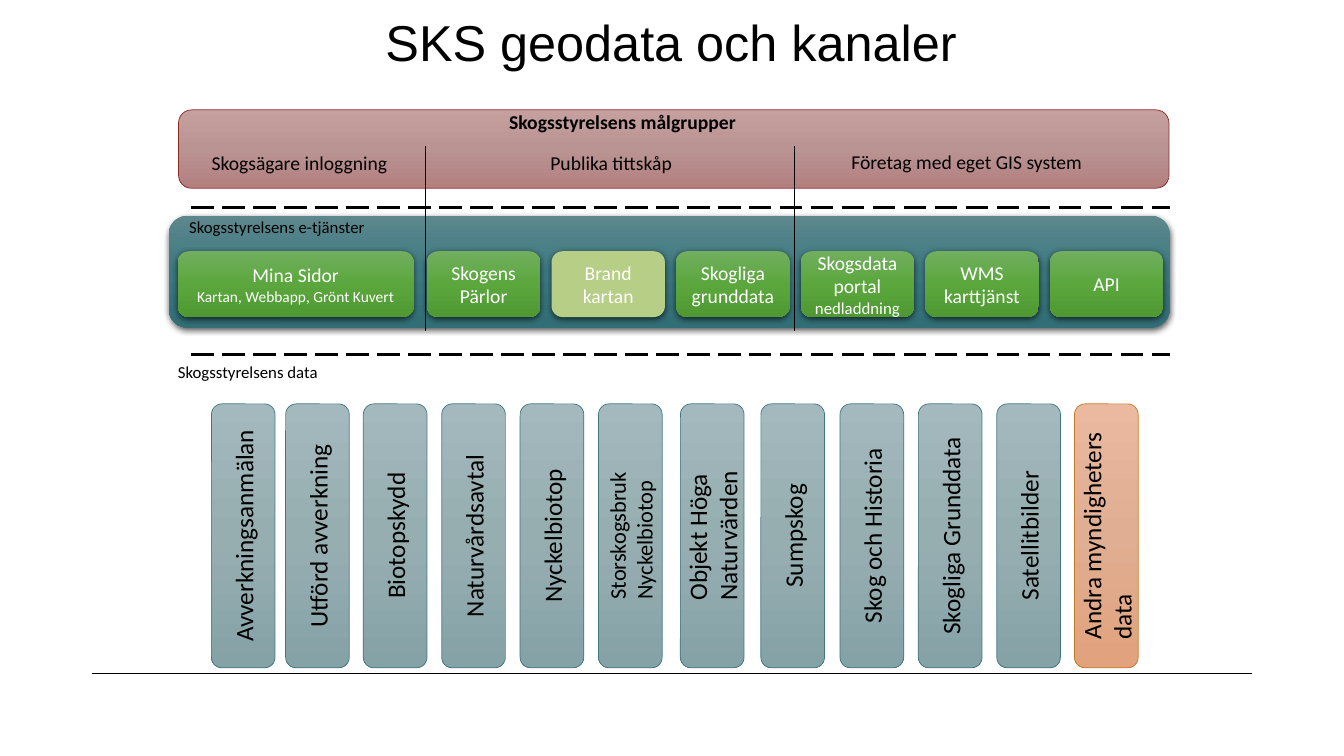
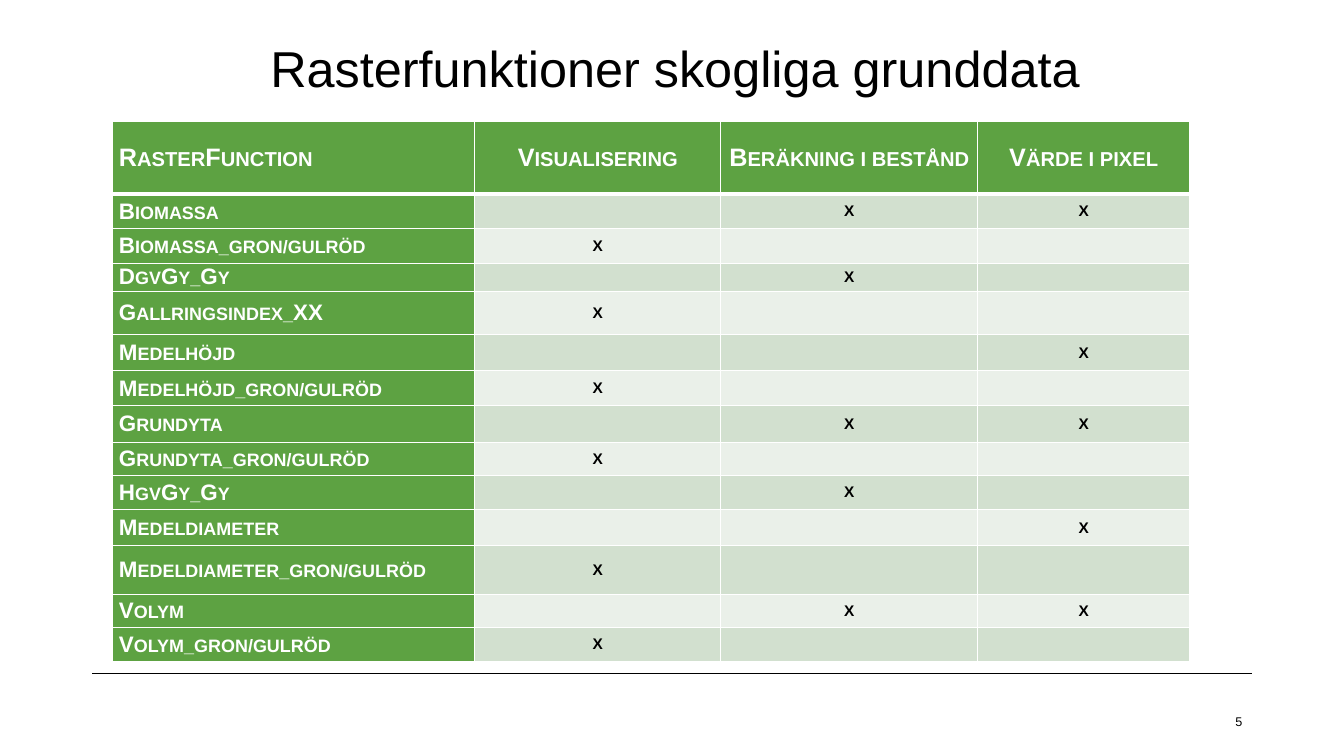
import copy
from dataclasses import dataclass
from typing import Any, Optional

import lxml.etree
import pptx
import pptx.dml.color
import pptx.enum.dml
import pptx.enum.shapes
import pptx.enum.text
import pptx.oxml.ns
import pptx.util

Pt = pptx.util.Pt
qn = pptx.oxml.ns.qn
ALIGN = pptx.enum.text.PP_ALIGN
ANCHOR = pptx.enum.text.MSO_ANCHOR

COLORS = {
    "black": "000000",
    "white": "FFFFFF",
    "header": "5DA242",
    "band_dark": "D2E0CF",
    "band_light": "EAF0E9",
    "lime": "B6CE85",
    "red_line": "8D2927",
    "slate_line": "3F777E",
    "orange_line": "C77922",
}
GRADIENTS = {
    "teal": ("5D878D", "3C7981", "326E76"),
    "red": ("C5A09F", "BA9393", "B27F7E"),
    "slate": ("A4B9BD", "97AEB1", "85A2A7"),
    "orange": ("EAB99F", "E0AE92", "E1A27D"),
    "green": ("71AE5E", "5BA73D", "4F9832"),
}


@dataclass
class Box:
    left: float
    top: float
    width: float
    height: float


@dataclass
class Line:
    text: str
    size: float
    color: str = "black"
    bold: bool = False
    font: str = "Calibri"
    align: Any = ALIGN.LEFT
    small_caps: bool = False


@dataclass
class DataSet:
    left: float
    name: str
    size: float = 18
    fill: str = "slate"


@dataclass
class Service:
    lines: list[tuple[str, float]]
    fill: str = "green"


@dataclass
class RasterFunction:
    name: str
    marks: str
    height: float


DATA_SETS = [
    DataSet(151, "Avverkningsanmälan"),
    DataSet(204, "Utförd avverkning"),
    DataSet(259.5, "Biotopskydd"),
    DataSet(315.5, "Naturvårdsavtal"),
    DataSet(371.5, "Nyckelbiotop"),
    DataSet(427.5, "Storskogsbruk Nyckelbiotop", 16),
    DataSet(486, "Objekt Höga Naturvärden"),
    DataSet(543.5, "Sumpskog"),
    DataSet(600, "Skog och Historia"),
    DataSet(656, "Skogliga Grunddata"),
    DataSet(712, "Satellitbilder"),
    DataSet(767.5, "Andra myndigheters data", fill="orange"),
]
LOGIN_SERVICE = Service([("Mina Sidor", 14), ("Kartan, Webbapp, Grönt Kuvert", 11)])
SERVICES = [
    Service([("Skogens Pärlor", 14)]),
    Service([("Brand kartan", 14)], "lime"),
    Service([("Skogliga grunddata", 14)]),
    Service([("Skogsdata portal", 14), ("nedladdning", 12)]),
    Service([("WMS karttjänst", 14)]),
    Service([("API", 14)]),
]
LABELS = [
    (Box(144, 104, 143, 25), Line("Skogsägare inloggning", 14)),
    (Box(386, 104, 106, 25), Line("Publika tittskåp", 14)),
    (Box(601, 103.5, 182, 25), Line("Företag med eget GIS system", 14)),
    (Box(120, 255, 120, 22), Line("Skogsstyrelsens data", 12)),
    (Box(128, 151, 146, 22), Line("Skogsstyrelsens e-tjänster", 12)),
    (Box(356.5, 75, 182, 25), Line("Skogsstyrelsens målgrupper", 14, bold=True)),
]
COLUMN_WIDTHS = (259.2, 175.7, 183.6, 151.2)
TABLE_HEADERS = ("RasterFunction", "Visualisering", "Beräkning i bestånd", "Värde i pixel")
HEADER_HEIGHT = 52
RASTER_FUNCTIONS = [
    RasterFunction("Biomassa", "-XX", 25),
    RasterFunction("Biomassa_gron/gulröd", "X--", 24.5),
    RasterFunction("DgvGy_Gy", "-X-", 20),
    RasterFunction("Gallringsindex_XX", "X--", 31),
    RasterFunction("Medelhöjd", "--X", 26),
    RasterFunction("Medelhöjd_gron/gulröd", "X--", 25),
    RasterFunction("Grundyta", "-XX", 26),
    RasterFunction("Grundyta_gron/gulröd", "X--", 23.5),
    RasterFunction("HgvGy_Gy", "-X-", 24.5),
    RasterFunction("Medeldiameter", "--X", 26),
    RasterFunction("Medeldiameter_gron/gulröd", "X--", 34.5),
    RasterFunction("Volym", "-XX", 24),
    RasterFunction("Volym_gron/gulröd", "X--", 24),
]


def rgb(name: str) -> pptx.dml.color.RGBColor:
    return pptx.dml.color.RGBColor.from_string(COLORS[name])


def place(box: Box) -> tuple:
    return Pt(box.left), Pt(box.top), Pt(box.width), Pt(box.height)


def write(text_frame: Any, lines: list[Line]) -> None:
    text_frame.text = "\n".join(line.text for line in lines)
    for paragraph, line in zip(text_frame.paragraphs, lines):
        paragraph.alignment = line.align
        for run in paragraph.runs:
            run.font.name = line.font
            run.font.size = Pt(line.size)
            run.font.bold = line.bold
            run.font.color.rgb = rgb(line.color)
            if line.small_caps:
                run._r.get_or_add_rPr().set("cap", "small")


def paint(shape: Any, fill: str) -> None:
    if fill in COLORS:
        shape.fill.solid()
        shape.fill.fore_color.rgb = rgb(fill)
        return
    shape.fill.gradient()
    shape.fill.gradient_angle = 270
    stop_list = shape._element.spPr.find(qn("a:gradFill")).find(qn("a:gsLst"))
    stop_list.append(copy.deepcopy(stop_list[0]))
    for index, (stop, color) in enumerate(zip(shape.fill.gradient_stops, GRADIENTS[fill])):
        stop.position = index / 2
        stop.color.rgb = pptx.dml.color.RGBColor.from_string(color)


def add_box(slide: Any, box: Box, fill: str, line: Optional[str] = None) -> Any:
    shape = slide.shapes.add_shape(
        pptx.enum.shapes.MSO_SHAPE.ROUNDED_RECTANGLE, *place(box))
    shape.shadow.inherit = False
    paint(shape, fill)
    if line:
        shape.line.color.rgb = rgb(line)
        shape.line.width = Pt(0.5)
    else:
        shape.line.fill.background()
    shape.text_frame.word_wrap = True
    shape.text_frame.vertical_anchor = ANCHOR.MIDDLE
    return shape


def add_shadow(shape: Any) -> None:
    effects = shape._element.spPr.find(qn("a:effectLst"))
    shadow = lxml.etree.SubElement(
        effects, qn("a:outerShdw"), blurRad=str(Pt(4.5)), dist=str(Pt(1.5)),
        dir="5400000", algn="ctr", rotWithShape="0")
    color = lxml.etree.SubElement(shadow, qn("a:srgbClr"), val=COLORS["black"])
    lxml.etree.SubElement(color, qn("a:alpha"), val="63000")


def add_line(slide: Any, start: tuple[float, float], end: tuple[float, float],
             width: float, dashed: bool = False) -> None:
    connector = slide.shapes.add_connector(
        pptx.enum.shapes.MSO_CONNECTOR.STRAIGHT, *map(Pt, start + end))
    connector.line.color.rgb = rgb("black")
    connector.line.width = Pt(width)
    if dashed:
        connector.line.dash_style = pptx.enum.dml.MSO_LINE.LONG_DASH
    lxml.etree.SubElement(connector._element.spPr, qn("a:effectLst"))


def add_label(slide: Any, box: Box, line: Line, anchor: Any = ANCHOR.TOP) -> None:
    text_frame = slide.shapes.add_textbox(*place(box)).text_frame
    text_frame.word_wrap = True
    text_frame.vertical_anchor = anchor
    write(text_frame, [line])


def add_slide(presentation: Any, title: str, box: Box) -> Any:
    slide = presentation.slides.add_slide(presentation.slide_layouts[5])
    placeholder = slide.shapes.title
    placeholder.left, placeholder.top, placeholder.width, placeholder.height = place(box)
    text_frame = placeholder.text_frame
    text_frame.auto_size = pptx.enum.text.MSO_AUTO_SIZE.NONE
    text_frame.vertical_anchor = ANCHOR.TOP
    write(text_frame, [Line(title, 36, font="Arial", align=ALIGN.CENTER)])
    text_frame.paragraphs[0].line_spacing = 0.9
    add_line(slide, (66, 481), (894, 481), 0.5)
    return slide


def add_service(slide: Any, service: Service, left: float, width: float) -> None:
    shape = add_box(slide, Box(left, 179.5, width, 47), service.fill)
    add_shadow(shape)
    write(shape.text_frame, [Line(text, size, "white", align=ALIGN.CENTER)
                             for text, size in service.lines])


def add_data_set(slide: Any, data_set: DataSet) -> None:
    shape = add_box(slide, Box(data_set.left, 288.5, 45.5, 188.5),
                    data_set.fill, data_set.fill + "_line")
    body = shape.text_frame._txBody.bodyPr
    body.set("vert", "vert270")
    body.set("anchorCtr", "1")
    write(shape.text_frame, [Line(data_set.name, data_set.size)])


def fill_cell(cell: Any, line: Line, fill: str, bottom: float) -> None:
    cell.margin_left = cell.margin_right = Pt(5)
    cell.margin_top = cell.margin_bottom = 0
    cell.vertical_anchor = ANCHOR.MIDDLE
    properties = cell._tc.get_or_add_tcPr()
    for side, width in (("L", 1), ("R", 1), ("T", 1), ("B", bottom)):
        border = lxml.etree.SubElement(properties, qn("a:ln" + side), w=str(Pt(width)))
        solid = lxml.etree.SubElement(border, qn("a:solidFill"))
        lxml.etree.SubElement(solid, qn("a:srgbClr"), val=COLORS["white"])
    cell.fill.solid()
    cell.fill.fore_color.rgb = rgb(fill)
    write(cell.text_frame, [line])
    if not line.text:
        lxml.etree.SubElement(cell.text_frame.paragraphs[0]._p, qn("a:endParaRPr"),
                              sz=str(int(line.size * 100)))


def build_channels(presentation: Any) -> None:
    slide = add_slide(presentation, "SKS geodata och kanaler", Box(173.5, 9.5, 612, 65))
    add_shadow(add_box(slide, Box(120.5, 154, 715, 80), "teal"))
    add_box(slide, Box(127.5, 78.5, 707.5, 56), "red", "red_line")
    for data_set in DATA_SETS:
        add_data_set(slide, data_set)
    add_service(slide, LOGIN_SERVICE, 127, 168.5)
    for index, service in enumerate(SERVICES):
        add_service(slide, service, 305 + 89 * index, 81)
    for x in (304, 567.5):
        add_line(slide, (x, 104.5), (x, 236.5), 0.75)
    for y in (148.5, 253):
        add_line(slide, (136.5, y), (835.5, y), 2, dashed=True)
    for box, line in LABELS:
        add_label(slide, box, line)


def build_raster_functions(presentation: Any) -> None:
    slide = add_slide(presentation, "Rasterfunktioner skogliga grunddata",
                      Box(99.5, 28, 765.5, 85))
    heights = [HEADER_HEIGHT] + [function.height for function in RASTER_FUNCTIONS]
    table = slide.shapes.add_table(
        len(heights), len(COLUMN_WIDTHS),
        *place(Box(80, 86.5, sum(COLUMN_WIDTHS), sum(heights)))).table
    for column, width in zip(table.columns, COLUMN_WIDTHS):
        column.width = Pt(width)
    for row, height in zip(table.rows, heights):
        row.height = Pt(height)
    for column, text in enumerate(TABLE_HEADERS):
        align = ALIGN.CENTER if column else ALIGN.LEFT
        fill_cell(table.cell(0, column),
                  Line(text, 18, "white", True, "Arial", align, True), "header", 3)
    for row, function in enumerate(RASTER_FUNCTIONS, 1):
        fill_cell(table.cell(row, 0),
                  Line(function.name, 16, "white", True, "Arial", small_caps=True), "header", 1)
        band = "band_dark" if row % 2 else "band_light"
        for column, mark in enumerate(function.marks, 1):
            fill_cell(table.cell(row, column),
                      Line(mark.strip("-"), 11, "black", True, "Arial", ALIGN.CENTER), band, 1)
    add_label(slide, Box(849.5, 500.5, 45, 29),
              Line("5", 9, font="Arial", align=ALIGN.RIGHT), ANCHOR.MIDDLE)


def main() -> None:
    presentation = pptx.Presentation()
    presentation.slide_width, presentation.slide_height = Pt(960), Pt(540)
    build_channels(presentation)
    build_raster_functions(presentation)
    presentation.save("out.pptx")


if __name__ == "__main__":
    main()
